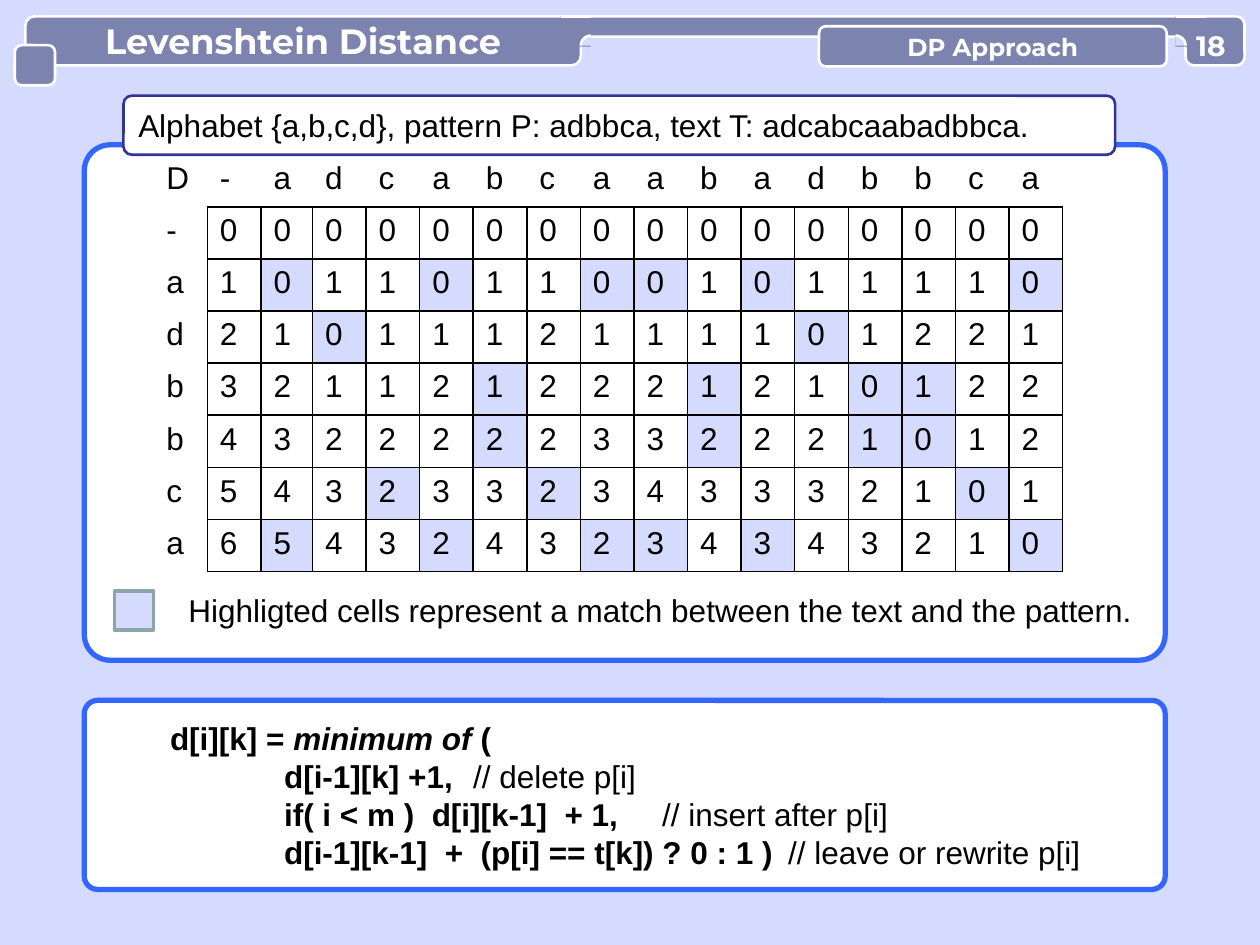
"""Build the Levenshtein Distance slide: DP table, match legend and recurrence."""
from math import cos, pi, sin

from lxml import etree
from pptx import Presentation
from pptx.dml.color import RGBColor
from pptx.enum.shapes import MSO_CONNECTOR, MSO_SHAPE
from pptx.enum.text import MSO_ANCHOR, MSO_AUTO_SIZE, PP_ALIGN
from pptx.oxml import parse_xml
from pptx.oxml.ns import nsdecls, qn
from pptx.util import Cm, Pt

RECT, ROUND = MSO_SHAPE.RECTANGLE, MSO_SHAPE.ROUNDED_RECTANGLE
STRAIGHT = MSO_CONNECTOR.STRAIGHT
LEFT, CENTER = PP_ALIGN.LEFT, PP_ALIGN.CENTER
TOP, MIDDLE = MSO_ANCHOR.TOP, MSO_ANCHOR.MIDDLE
NO_AUTOSIZE = MSO_AUTO_SIZE.NONE

LAVENDER = RGBColor(0xD5, 0xDA, 0xFF)
SLATE = RGBColor(0x7D, 0x83, 0xAF)
BLUE = RGBColor(0x33, 0x66, 0xFF)
NAVY = RGBColor(0x33, 0x33, 0x99)
SAGE = RGBColor(0x8A, 0xA6, 0xA8)
WHITE = RGBColor(0xFF, 0xFF, 0xFF)
BLACK = RGBColor(0x00, 0x00, 0x00)

PATTERN = "-adbbca"
TEXT = "-adcabcaabadbbca"
DISTANCES = [
    "0000000000000000",
    "1011011001011110",
    "2101112111101221",
    "3211212221210122",
    "4322222332221012",
    "5432332343332101",
    "6543243234343210",
]
RECURRENCE = [
    (1.4, [("d[i][k] = ", True, False), ("minimum of", True, True), (" (", True, False)]),
    (3.7, [("d[i-1][k] +1,", True, False), ("\t// delete p[i]", False, False)]),
    (3.7, [("if( i < m )  d[i][k-1]  + 1,", True, False),
           ("\t// insert after p[i]", False, False)]),
    (3.7, [("d[i-1][k-1]  +  (p[i] == t[k]) ? 0 : 1 )", True, False),
           ("\t// leave or rewrite p[i]", False, False)]),
]


def add_box(kind, left, top, width, height, fill, line, weight, radius=None):
    sp = s.shapes.add_shape(kind, Cm(left), Cm(top), Cm(width), Cm(height))
    sp.shadow.inherit = False
    sp.fill.solid()
    sp.fill.fore_color.rgb = fill
    if line is None:
        sp.line.fill.background()
    else:
        sp.line.color.rgb = line
        sp.line.width = Pt(weight)
    if radius is not None:
        sp.adjustments[0] = radius
    return sp


def add_run(p, text, size, color=BLACK, font="Arial", bold=False, italic=False):
    r = p.add_run()
    r.text = text
    r.font.size = Pt(size)
    r.font.name = font
    r.font.bold = bold
    r.font.italic = italic
    r.font.color.rgb = color


prs = Presentation()
prs.slide_width, prs.slide_height = Cm(25.4), Cm(19.05)
s = prs.slides.add_slide(prs.slide_layouts[5])
s.background.fill.solid()
s.background.fill.fore_color.rgb = LAVENDER

code = add_box(ROUND, 1.7, 14.12, 21.79, 3.81, WHITE, BLUE, 3, 0.07)
tf = code.text_frame
tf.word_wrap = True
tf.vertical_anchor = MIDDLE
for i, (indent, runs) in enumerate(RECURRENCE):
    p = tf.paragraphs[0] if i == 0 else tf.add_paragraph()
    p.alignment = LEFT
    pPr = p._p.get_or_add_pPr()
    pPr.set("marL", str(Cm(indent)))
    pPr.set("indent", "0")
    pPr.append(parse_xml(
        f'<a:tabLst {nsdecls("a")}><a:tab pos="{Cm(14.5)}" algn="l"/></a:tabLst>'))
    for text, bold, italic in runs:
        add_run(p, text, 18, bold=bold, italic=italic)

add_box(ROUND, 1.7, 2.92, 21.79, 10.39, WHITE, BLUE, 3, 0.05)

rows, cols = len(PATTERN) + 1, len(TEXT) + 1
frame = s.shapes.add_table(rows, cols, Cm(3.1), Cm(3.12), Cm(18.32), Cm(8.4))
table = frame.table
table.first_row = table.horz_banding = False
for i, column in enumerate(table.columns):
    column.width = Cm(1.04 if i == 2 else 1.08)
for row in table.rows:
    row.height = Cm(1.05)
grid = ["D" + TEXT] + [label + values for label, values in zip(PATTERN, DISTANCES)]
for i, values in enumerate(grid):
    for j, value in enumerate(values):
        cell = table.cell(i, j)
        p = cell.text_frame.paragraphs[0]
        p.alignment = LEFT
        add_run(p, value, 18)
        tcPr = cell._tc.get_or_add_tcPr()
        edges = {"lnL": j > 0 and i > 0, "lnR": i > 0,
                 "lnT": i > 0 and j > 0, "lnB": j > 0}
        for edge, visible in edges.items():
            ln = etree.SubElement(tcPr, qn(f"a:{edge}"), w=str(Pt(1)))
            if visible:
                color = etree.SubElement(ln, qn("a:solidFill"))
                etree.SubElement(color, qn("a:srgbClr"), val=str(BLACK))
            else:
                etree.SubElement(ln, qn("a:noFill"))
        if i > 1 and j > 1 and PATTERN[i - 1] == TEXT[j - 1]:
            cell.fill.solid()
            cell.fill.fore_color.rgb = LAVENDER
        else:
            cell.fill.background()

add_box(RECT, 2.31, 11.91, 0.79, 0.79, LAVENDER, SAGE, 2)

alphabet = add_box(ROUND, 2.49, 1.93, 19.99, 1.19, WHITE, NAVY, 1.5, 0.14)
tf = alphabet.text_frame
tf.word_wrap = True
tf.vertical_anchor = MIDDLE
p = tf.paragraphs[0]
p.alignment = LEFT
add_run(p, "Alphabet {a,b,c,d}, pattern P: adbbca, text T: adcabcaabadbbca.", 18)

add_box(ROUND, 0.51, 0.33, 11.2, 0.99, SLATE, WHITE, 1.5, 0.19)
add_box(ROUND, 11.71, 0.33, 12.4, 0.41, SLATE, WHITE, 1.5, 0.5)
add_box(ROUND, 0.3, 0.91, 0.81, 0.81, SLATE, WHITE, 1.5, 0.17)
add_box(ROUND, 23.9, 0.33, 1.19, 0.99, SLATE, WHITE, 1.5, 0.17)

for left, center_x, side in [(11.3, 11.91, -1), (23.7, 23.7, 1)]:
    add_box(RECT, left, 0.33, 0.61, 0.61, SLATE, None, 0)
    edge = s.shapes.add_connector(STRAIGHT, Cm(left), Cm(0.33), Cm(left + 0.61), Cm(0.33))
    edge.line.color.rgb = WHITE
    edge.line.width = Pt(1.5)
    etree.SubElement(edge._element.spPr, qn("a:effectLst"))
    angles = [pi / 2 * step / 8 for step in range(9)]
    arc = [(Cm(center_x + side * 0.2 * sin(a)), Cm(0.92 - 0.2 * cos(a))) for a in angles]
    for closed in (True, False):
        builder = s.shapes.build_freeform(*arc[0])
        corner = [(Cm(center_x), Cm(0.92))] if closed else []
        builder.add_line_segments(arc[1:] + corner, close=closed)
        sp = builder.convert_to_shape()
        sp.shadow.inherit = False
        if closed:
            sp.fill.solid()
            sp.fill.fore_color.rgb = LAVENDER
            sp.line.fill.background()
        else:
            sp.fill.background()
            sp.line.color.rgb = WHITE
            sp.line.width = Pt(1.5)

approach = add_box(ROUND, 16.51, 0.53, 7.01, 0.81, SLATE, WHITE, 1.5, 0.17)
tf = approach.text_frame
tf.vertical_anchor = MIDDLE
p = tf.paragraphs[0]
p.alignment = CENTER
add_run(p, "DP Approach", 14, WHITE, "Montserrat", True)

title = s.shapes.title
title.left, title.top, title.width, title.height = Cm(0.51), Cm(0.33), Cm(11.2), Cm(0.99)
s.shapes.element.append(title.element)
number = s.shapes.add_textbox(Cm(23.9), Cm(0.56), Cm(1.02), Cm(0.69))
legend = s.shapes.add_textbox(Cm(3.71), Cm(11.91), Cm(19.2), Cm(0.99))
for sp, text, size, color, font, bold, anchor in [
    (title, "Levenshtein Distance", 20, WHITE, "Montserrat", True, MIDDLE),
    (number, "18", 16, WHITE, "Montserrat", True, MIDDLE),
    (legend, "Highligted cells represent a match between the text and the pattern.",
     18, BLACK, "Arial", False, TOP),
]:
    tf = sp.text_frame
    tf.word_wrap = True
    tf.auto_size = NO_AUTOSIZE
    tf.vertical_anchor = anchor
    tf.margin_left = tf.margin_right = tf.margin_top = tf.margin_bottom = 0
    p = tf.paragraphs[0]
    p.alignment = CENTER
    add_run(p, text, size, color, font, bold)

prs.save("out.pptx")
